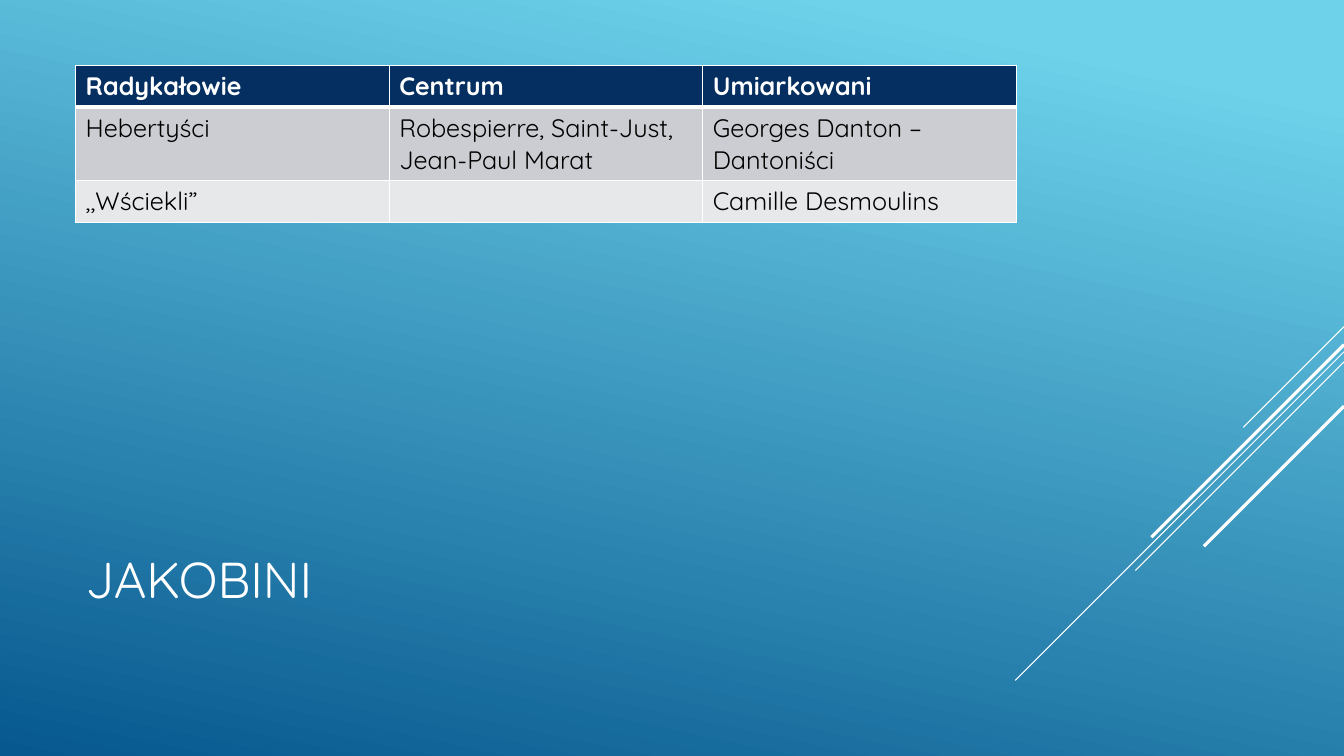
from lxml.etree import SubElement
from pptx import Presentation
from pptx.dml.color import RGBColor
from pptx.enum.shapes import MSO_CONNECTOR as Connector
from pptx.enum.text import MSO_ANCHOR as Anchor, PP_ALIGN as Align
from pptx.oxml.ns import qn
from pptx.util import Inches, Pt

TITLE = "JAKOBINI"
ROWS = [
    ("Radykałowie", "Centrum", "Umiarkowani"),
    ("Hebertyści", "Robespierre, Saint-Just, Jean-Paul Marat", "Georges Danton – Dantoniści"),
    (",,Wściekli”", "", "Camille Desmoulins"),
]
ROW_HEIGHTS = (0.41, 0.7, 0.41)
COLORS = {
    "sky": "6ED2EB",
    "deep": "06588E",
    "white": "FFFFFF",
    "black": "000000",
    "header": "052F61",
    "band_dark": "CCCDD2",
    "band_light": "E7E8EA",
}
ROW_FILLS = ("header", "band_dark", "band_light")
FONT = "Quicksand"
PAGE_WIDTH, PAGE_HEIGHT = 13.33, 7.5
LEFT, CONTENT_WIDTH = 0.75, 9.33
TABLE_TOP = 0.65
TITLE_TOP, TITLE_HEIGHT = 4.91, 1.65
DIAGONALS = [
    (3.24, 1.0, 0.75),
    (3.49, 3.26, 0.75),
    (3.59, 2.07, 0.75),
    (3.42, 1.91, 2.25),
    (4.03, 1.39, 2.25),
]


def rgb(name):
    return RGBColor.from_string(COLORS[name])


def write_text(frame, text, size=18, color="black", bold=False):
    para = frame.paragraphs[0]
    para.alignment = Align.LEFT
    para.font.size = Pt(size)
    if text:
        span = para.add_run()
        span.text = text
        span.font.name = FONT
        span.font.size = Pt(size)
        span.font.bold = bold
        span.font.color.rgb = rgb(color)


def add_borders(cell, **widths):
    properties = cell._tc.get_or_add_tcPr()
    for side in "LRTB":
        width = widths.get(side, 1)
        line = SubElement(properties, qn(f"a:ln{side}"), w=str(Pt(width)))
        fill = SubElement(line, qn("a:solidFill"))
        SubElement(fill, qn("a:srgbClr"), val=COLORS["white"])


def paint_background(page):
    fill = page.background.fill
    fill.gradient()
    fill.gradient_angle = 258
    for stop, color, position in zip(fill.gradient_stops, ("sky", "deep"), (0.1, 1)):
        stop.color.rgb = rgb(color)
        stop.position = position


def add_diagonal(page, top, length, width):
    line = page.shapes.add_connector(
        Connector.STRAIGHT,
        Inches(PAGE_WIDTH), Inches(top),
        Inches(PAGE_WIDTH - length), Inches(top + length),
    )
    line.line.color.rgb = rgb("white")
    line.line.width = Pt(width)
    SubElement(line._element.spPr, qn("a:effectLst"))


def add_title(page):
    title = page.shapes.title
    title.left, title.top = Inches(LEFT), Inches(TITLE_TOP)
    title.width, title.height = Inches(CONTENT_WIDTH), Inches(TITLE_HEIGHT)
    title.text_frame.word_wrap = True
    title.text_frame.vertical_anchor = Anchor.MIDDLE
    write_text(title.text_frame, TITLE, size=36, color="white")


def add_factions(page):
    table = page.shapes.add_table(
        len(ROWS), len(ROWS[0]), Inches(LEFT), Inches(TABLE_TOP),
        Inches(CONTENT_WIDTH), Inches(sum(ROW_HEIGHTS)),
    ).table
    table.horz_banding = False
    for index, texts in enumerate(ROWS):
        table.rows[index].height = Inches(ROW_HEIGHTS[index])
        header = index == 0
        for column, text in enumerate(texts):
            cell = table.cell(index, column)
            add_borders(cell, B=3 if header else 1, T=3 if index == 1 else 1)
            cell.fill.solid()
            cell.fill.fore_color.rgb = rgb(ROW_FILLS[index])
            write_text(cell.text_frame, text, color="white" if header else "black", bold=header)


def main():
    deck = Presentation()
    deck.slide_width, deck.slide_height = Inches(PAGE_WIDTH), Inches(PAGE_HEIGHT)
    page = deck.slides.add_slide(deck.slide_layouts[5])
    paint_background(page)
    for diagonal in DIAGONALS:
        add_diagonal(page, *diagonal)
    add_title(page)
    add_factions(page)
    deck.save("out.pptx")


if __name__ == "__main__":
    main()
